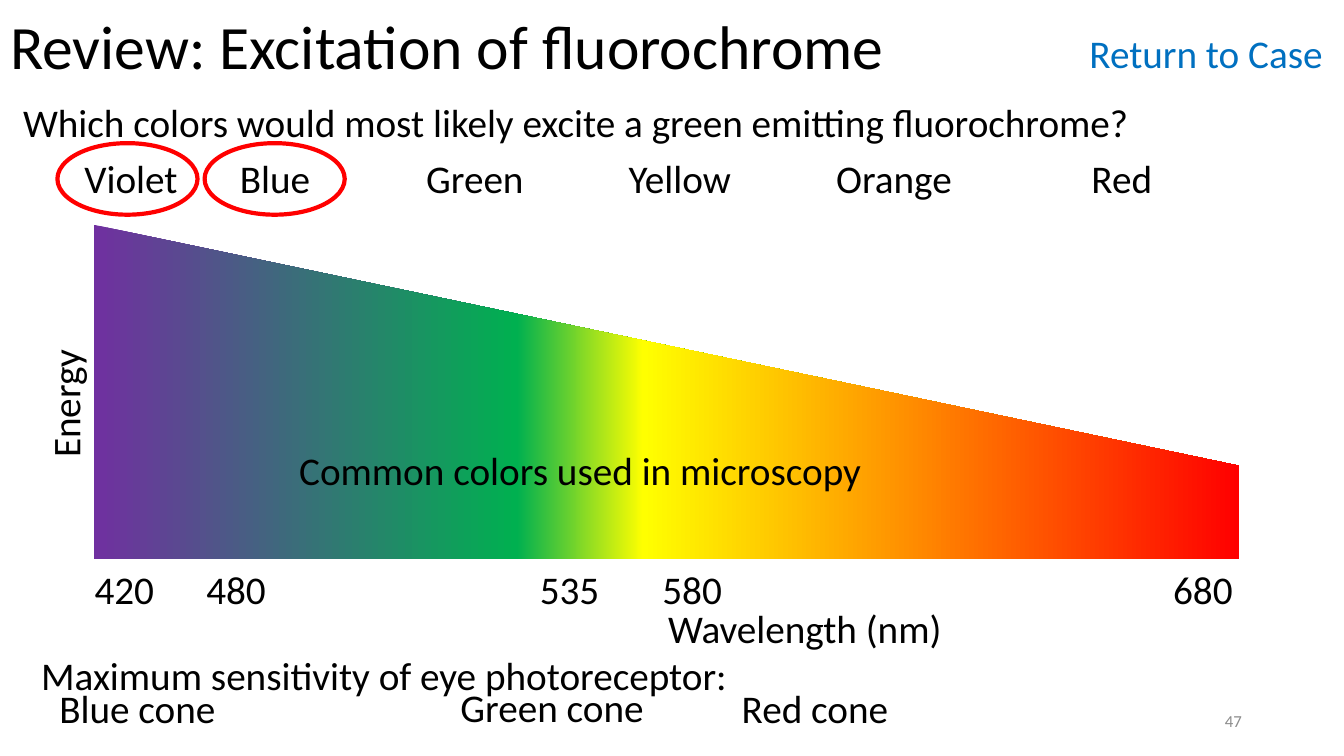
from lxml.etree import SubElement
from pptx import Presentation
from pptx.dml.color import RGBColor
from pptx.enum.shapes import MSO_SHAPE
from pptx.enum.text import MSO_ANCHOR, MSO_AUTO_SIZE, PP_ALIGN
from pptx.oxml.ns import qn
from pptx.util import Inches, Pt

COLUMNS, ROWS = 160, 90
WIDTH, HEIGHT = Inches(13.33), Inches(7.5)
LABEL_ROWS = 6.84
FONT = "Calibri"
COLORS = {
    "text": "000000",
    "link": "0070C0",
    "number": "8C8C8C",
    "answer": "FF0000",
}
SPECTRUM = [(0, "7030A0"), (37, "00B050"), (48, "FFFF00"), (100, "FF0000")]
COLOR_NAMES = ["Violet", "Blue", "Green", "Yellow", "Orange", "Red"]
COLOR_TABS = [7.3, 25.8, 48, 72.1, 96.8, 127.2]
WAVELENGTHS = ["420", "480", "535", "580", "680"]
WAVELENGTH_TABS = [13.3, 53, 67.6, 128.4]
# text, column, row, columns wide
LABELS = [
    ("Wavelength (nm)", 78.36, 71.4, 35.28),
    ("Common colors used in microscopy", 34.44, 52.56, 70.08),
    ("Maximum sensitivity of eye photoreceptor:", 3.72, 76.92, 86.04),
    ("Blue cone", 5.88, 80.88, 21.24),
    ("Green cone", 53.64, 80.76, 24.48),
    ("Red cone", 87.12, 80.88, 20.04),
]


def across(columns):
    return round(WIDTH * columns / COLUMNS)


def down(rows):
    return round(HEIGHT * rows / ROWS)


def area(column, row, columns, rows):
    return across(column), down(row), across(columns), down(rows)


def set_tabs(paragraph, stops):
    """Add left tab stops, given in grid columns from the text edge."""
    tab_list = SubElement(paragraph._p.get_or_add_pPr(), qn("a:tabLst"))
    for stop in stops:
        SubElement(tab_list, qn("a:tab"), pos=str(across(stop)), algn="l")


def style(paragraph, size=28, color="text"):
    paragraph.font.name = FONT
    paragraph.font.size = Pt(size)
    paragraph.font.color.rgb = RGBColor.from_string(COLORS[color])


def add_text(slide, text, column, row, columns, rows=LABEL_ROWS, wrap=False,
             size=28, color="text"):
    box = slide.shapes.add_textbox(*area(column, row, columns, rows))
    box.text_frame.word_wrap = wrap
    box.text_frame.text = text
    style(box.text_frame.paragraphs[0], size, color)
    return box


def add_title(slide, text):
    title = slide.shapes.title
    title.left, title.top, title.width, title.height = area(0, 0, 159, 11.76)
    frame = title.text_frame
    frame.text = text
    frame.auto_size = MSO_AUTO_SIZE.NONE
    frame.vertical_anchor = MSO_ANCHOR.MIDDLE
    paragraph = frame.paragraphs[0]
    paragraph.alignment = PP_ALIGN.LEFT
    paragraph.line_spacing = 0.9
    style(paragraph, 44)


def add_question(slide):
    box = slide.shapes.add_textbox(*area(1.56, 11.76, 155.76, 23.16))
    frame = box.text_frame
    frame.word_wrap = True
    frame.text = "Which colors would most likely excite a green emitting fluorochrome?"
    choices = frame.add_paragraph()
    choices.text = "\t" + "\t".join(COLOR_NAMES)
    set_tabs(choices, COLOR_TABS)
    for paragraph in frame.paragraphs:
        paragraph.line_spacing = 0.9
        style(paragraph)
    choices.space_before = Pt(10)


def add_spectrum(slide, kind, row, rows):
    band = slide.shapes.add_shape(kind, *area(11.16, row, 136.32, rows))
    band.shadow.inherit = False
    band.line.fill.background()
    band.fill.gradient()
    band.fill.gradient_angle = 0
    stops = band._element.spPr.find(qn("a:gradFill")).find(qn("a:gsLst"))
    stops.clear()
    for percent, color in SPECTRUM:
        stop = SubElement(stops, qn("a:gs"), pos=str(percent * 1000))
        SubElement(stop, qn("a:srgbClr"), val=color)


def add_answer_ring(slide, column):
    ring = slide.shapes.add_shape(
        MSO_SHAPE.OVAL, *area(column, 17.04, 16.68, 8.52))
    ring.shadow.inherit = False
    ring.fill.background()
    ring.line.color.rgb = RGBColor.from_string(COLORS["answer"])
    ring.line.width = Pt(3)


def main():
    deck = Presentation()
    deck.slide_width, deck.slide_height = WIDTH, HEIGHT
    slide = deck.slides.add_slide(deck.slide_layouts[5])

    add_title(slide, "Review: Excitation of fluorochrome")
    add_question(slide)
    add_spectrum(slide, MSO_SHAPE.RIGHT_TRIANGLE, 26.76, 28.68)
    add_spectrum(slide, MSO_SHAPE.RECTANGLE, 55.32, 11.28)

    energy = add_text(slide, "Energy", 0, 44.52, 15.48)
    energy.rotation = 270
    scale = add_text(slide, "\t".join(WAVELENGTHS), 10.08, 66.72, 147.24, wrap=True)
    scale_line = scale.text_frame.paragraphs[0]
    set_tabs(scale_line, WAVELENGTH_TABS)
    # The schema wants the tab stops ahead of the default run properties.
    properties = scale_line._p.pPr
    properties.append(properties.find(qn("a:defRPr")))

    for text, column, row, columns in LABELS:
        add_text(slide, text, column, row, columns)
    add_text(slide, "Return to Case", 128.52, 2.88, 30.48, color="link")
    for column in (6.84, 24.36):
        add_answer_ring(slide, column)

    number = add_text(slide, "47", 113.04, 83.4, 36, 4.8, wrap=True,
                      size=12, color="number")
    number.text_frame.vertical_anchor = MSO_ANCHOR.MIDDLE
    number.text_frame.paragraphs[0].alignment = PP_ALIGN.RIGHT

    deck.save("out.pptx")


if __name__ == "__main__":
    main()
